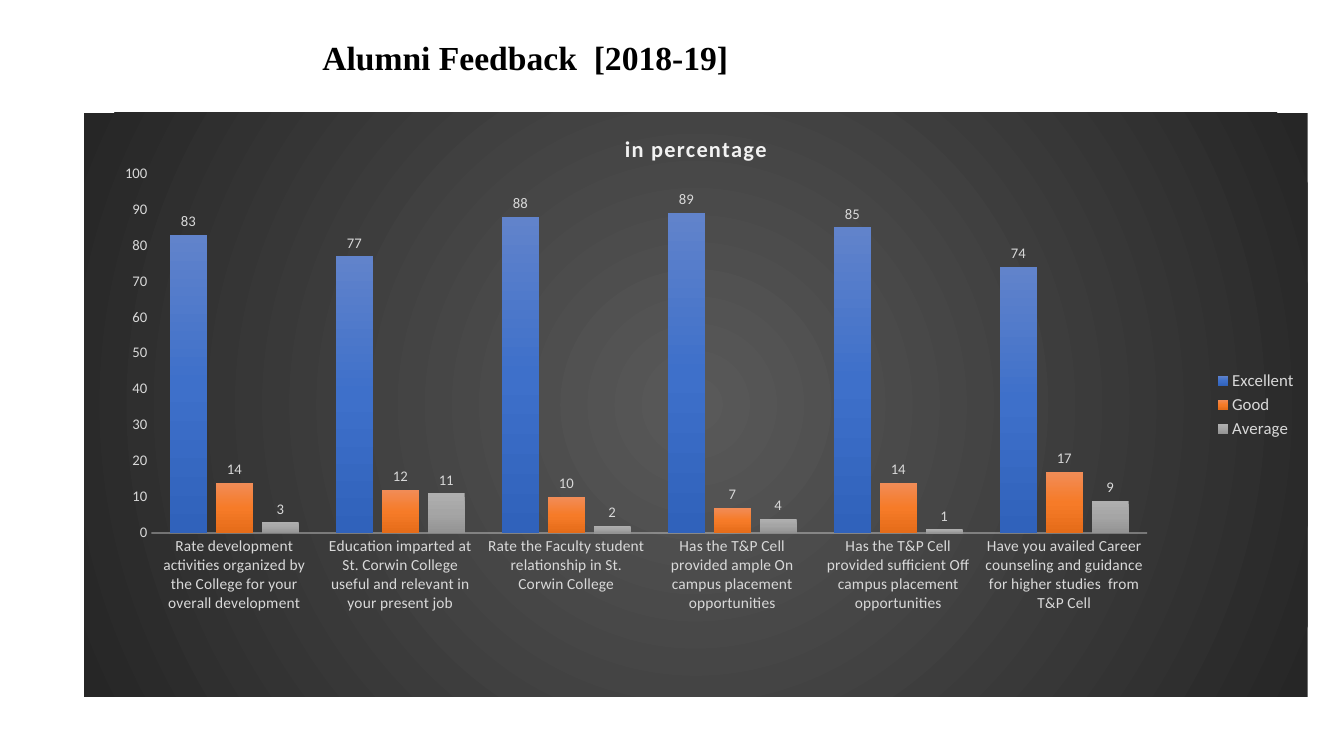
"""Builds the alumni feedback slide with its clustered column chart."""
from dataclasses import dataclass

from lxml import etree
from pptx import Presentation
from pptx.chart.data import CategoryChartData
from pptx.dml.color import RGBColor
from pptx.enum.chart import XL_CHART_TYPE as ChartType
from pptx.enum.chart import XL_LABEL_POSITION as LabelPosition
from pptx.enum.chart import XL_LEGEND_POSITION as LegendPosition
from pptx.enum.chart import XL_TICK_MARK as TickMark
from pptx.enum.text import MSO_ANCHOR as Anchor
from pptx.enum.text import PP_ALIGN as Align
from pptx.oxml import parse_xml
from pptx.oxml.ns import nsdecls, qn
from pptx.util import Pt


@dataclass(frozen=True)
class Theme:
    """Colours, fonts and type sizes of the slide."""
    heading_font: str = "Times New Roman"
    chart_font: str = "Calibri"
    heading_size: float = 24
    chart_title_size: float = 16
    legend_size: float = 12
    category_size: float = 11
    value_size: float = 10.5
    heading_color: str = "000000"
    chart_title_color: str = "F2F2F2"
    label_color: str = "D9D9D9"
    axis_color: str = "F2F2F2"
    backdrop: tuple = ("595959", "262626")
    excellent: tuple = ("6183CB", "3E70CA", "3062BB")
    good: tuple = ("F18C57", "F67B28", "E56C19")
    average: tuple = ("AFAFAF", "A5A5A5", "939393")


THEME = Theme()
QUESTIONS = (
    "Rate development activities organized by the College for your overall development",
    "Education imparted at St. Corwin College useful and relevant in your present job",
    "Rate the Faculty student relationship in St. Corwin College",
    "Has the T&P Cell provided ample On campus placement opportunities",
    "Has the T&P Cell provided sufficient Off campus placement opportunities",
    "Have you availed Career counseling and guidance for higher studies  from T&P Cell",
)
RATINGS = (
    ("Excellent", (83, 77, 88, 89, 85, 74), THEME.excellent),
    ("Good", (14, 12, 10, 7, 14, 17), THEME.good),
    ("Average", (3, 11, 2, 4, 1, 9), THEME.average),
)
RADIAL = ('<a:path path="circle"><a:fillToRect l="50000" t="50000" '
          'r="50000" b="50000"/></a:path>')
DOWNWARD = '<a:lin ang="5400000" scaled="0"/>'


def style_font(font, size, color, name=THEME.chart_font, bold=False):
    """Set the size, colour, face and weight of a font."""
    font.size = Pt(size)
    font.color.rgb = RGBColor.from_string(color)
    font.name = name
    font.bold = bold


def write_text(frame, text, align=Align.LEFT, spacing=None, **font_format):
    """Fill a text frame with one formatted run."""
    paragraph = frame.paragraphs[0]
    paragraph.alignment = align
    run = paragraph.add_run()
    run.text = text
    style_font(run.font, **font_format)
    if spacing is not None:
        run.font._element.set("spc", str(int(spacing * 100)))


def gradient(colors, direction):
    """Return a gradient fill with evenly spaced colours."""
    step = 100000 // (len(colors) - 1)
    stops = "".join(
        f'<a:gs pos="{index * step}"><a:srgbClr val="{color}"/></a:gs>'
        for index, color in enumerate(colors))
    return parse_xml(f'<a:gradFill {nsdecls("a")} rotWithShape="1">'
                     f'<a:gsLst>{stops}</a:gsLst>{direction}</a:gradFill>')


def paint_backdrop(chart):
    """Give the chart area its radial gradient."""
    area = parse_xml(f'<c:spPr {nsdecls("c", "a")}/>')
    area.append(gradient(THEME.backdrop, RADIAL))
    etree.SubElement(etree.SubElement(area, qn("a:ln")), qn("a:noFill"))
    chart._chartSpace.find(qn("c:chart")).addnext(area)


def place_plot(chart, **bounds):
    """Fix the inner plot area as fractions of the chart."""
    plot_area = chart._chartSpace.find(qn("c:chart")).find(qn("c:plotArea"))
    for automatic in plot_area.findall(qn("c:layout")):
        plot_area.remove(automatic)
    layout = etree.Element(qn("c:layout"))
    manual = etree.SubElement(layout, qn("c:manualLayout"))
    settings = {"layoutTarget": "inner", "xMode": "edge", "yMode": "edge", **bounds}
    for tag, value in settings.items():
        etree.SubElement(manual, qn(f"c:{tag}")).set("val", str(value))
    plot_area.insert(0, layout)


def style_axes(chart):
    """Format the question axis and the percentage axis."""
    questions, percentages = chart.category_axis, chart.value_axis
    for axis, size in ((questions, THEME.category_size),
                       (percentages, THEME.value_size)):
        axis.major_tick_mark = axis.minor_tick_mark = TickMark.NONE
        axis.has_major_gridlines = False
        style_font(axis.tick_labels.font, size, THEME.label_color)
    percentages.minimum_scale, percentages.maximum_scale = 0, 100
    percentages.major_unit = 10
    percentages.format.line.fill.background()
    baseline = questions.format.line
    baseline.width = Pt(1)
    baseline.color.rgb = RGBColor.from_string(THEME.axis_color)
    tint = questions._element.find(f'{qn("c:spPr")}//{qn("a:srgbClr")}')
    etree.SubElement(tint, qn("a:alpha")).set("val", "54000")


def style_columns(chart):
    """Space, colour and label the columns."""
    plot = chart.plots[0]
    plot.gap_width, plot.overlap, plot.vary_by_categories = 100, -24, False
    for series, (_, _, colors) in zip(plot.series, RATINGS):
        series.invert_if_negative = False
        series._element.get_or_add_spPr().append(gradient(colors, DOWNWARD))
        labels = series.data_labels
        labels.show_value = True
        labels.position = LabelPosition.OUTSIDE_END
        style_font(labels.font, THEME.value_size, THEME.label_color)


def add_heading(slide, text):
    """Write the slide title."""
    heading = slide.shapes.title
    heading.left, heading.top = Pt(223), Pt(23)
    heading.width, heading.height = Pt(335), Pt(36)
    heading.text_frame.vertical_anchor = Anchor.TOP
    heading.text_frame.word_wrap = True
    write_text(heading.text_frame, text, size=THEME.heading_size, bold=True,
               color=THEME.heading_color, name=THEME.heading_font)


def add_feedback_chart(slide):
    """Add the chart of ratings by question."""
    feedback = CategoryChartData()
    feedback.categories = QUESTIONS
    for rating, shares, _ in RATINGS:
        feedback.add_series(rating, shares)
    chart = slide.shapes.add_chart(ChartType.COLUMN_CLUSTERED, Pt(60), Pt(80.6),
                                   Pt(874), Pt(417), feedback).chart
    style_font(chart.font, THEME.value_size, THEME.label_color)
    paint_backdrop(chart)
    chart.has_title = True
    write_text(chart.chart_title.text_frame, "in percentage", align=Align.CENTER,
               spacing=1, size=THEME.chart_title_size, bold=True,
               color=THEME.chart_title_color)
    chart.chart_title.include_in_layout = False
    chart.has_legend = True
    chart.legend.position = LegendPosition.RIGHT
    chart.legend.include_in_layout = False
    style_font(chart.legend.font, THEME.legend_size, THEME.label_color)
    style_axes(chart)
    style_columns(chart)
    place_plot(chart, x=0.055, y=0.104, w=0.814, h=0.616)


def main():
    """Build and save the presentation."""
    deck = Presentation()
    deck.slide_width, deck.slide_height = Pt(960), Pt(540)
    slide = deck.slides.add_slide(deck.slide_layouts[5])
    add_heading(slide, "Alumni Feedback  [2018-19]")
    add_feedback_chart(slide)
    deck.save("out.pptx")


if __name__ == "__main__":
    main()
